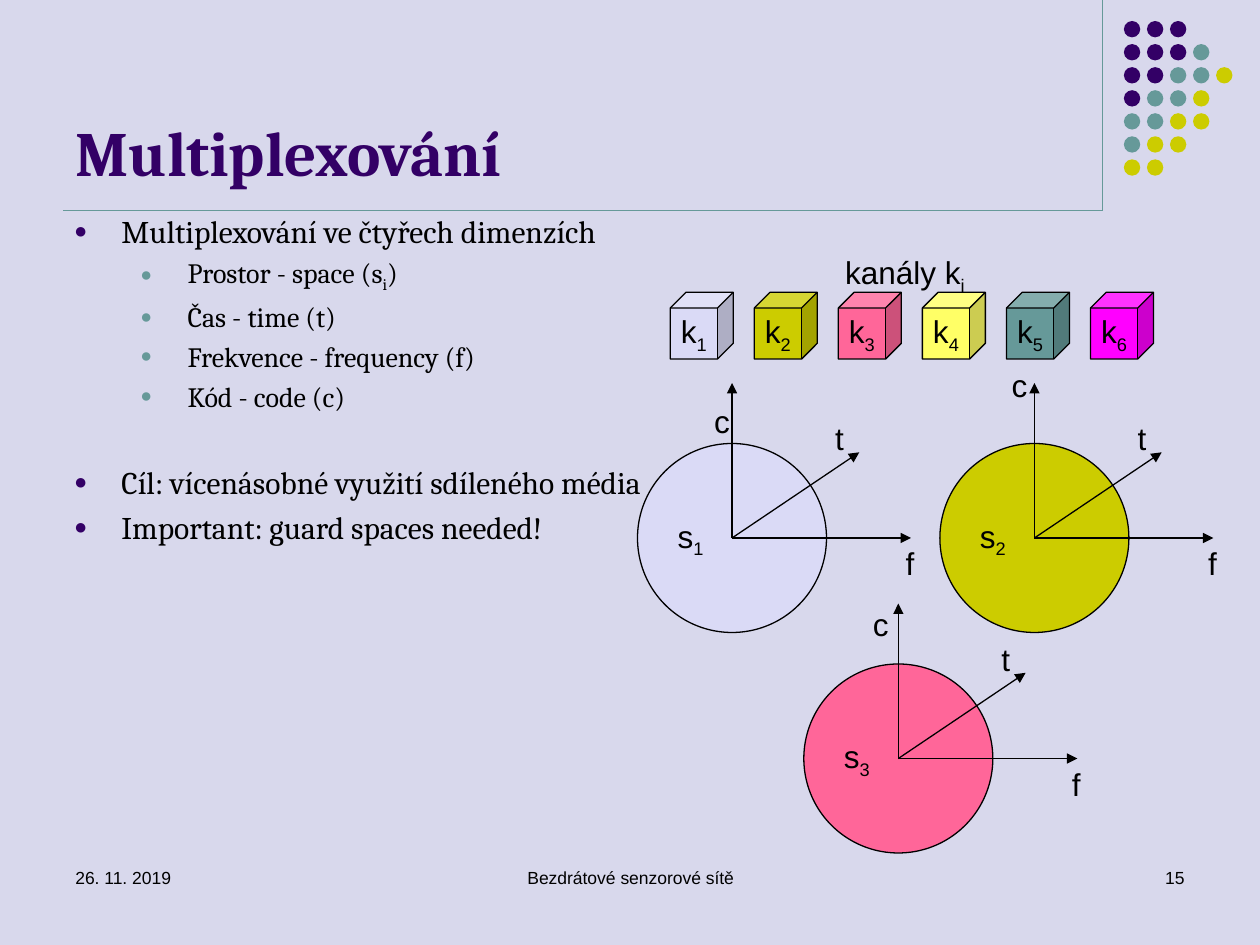
"""Build the slide on multiplexing in four dimensions."""
from dataclasses import dataclass

import lxml.etree
import pptx
import pptx.dml.color
import pptx.enum.shapes
import pptx.enum.text
import pptx.oxml.ns
import pptx.util

SHAPE = pptx.enum.shapes.MSO_SHAPE
ALIGN = pptx.enum.text.PP_ALIGN
ANCHOR = pptx.enum.text.MSO_ANCHOR
COLUMNS, ROWS = 100, 75
PURPLE, TEAL, OLIVE, BLACK = "330066", "669999", "CCCC00", "000000"
LILAC, PINK, YELLOW, MAGENTA = "DADAF6", "FF6699", "FFFF66", "FF00FF"
BACKGROUND = "D8D8EC"


@dataclass
class Style:
    """Font settings of a piece of text."""
    size: float = 18
    font: str = "Arial"
    color: str = BLACK
    bold: bool = False


@dataclass
class Phrase:
    """Words that may hold a subscript."""
    text: str
    sub: str = ""
    rest: str = ""


@dataclass
class Bullet:
    """One line of the list."""
    phrase: Phrase
    level: int = 0
    before: float = 4


@dataclass
class Space:
    """A space with its three axes, placed by its centre."""
    number: str
    column: float
    row: float
    color: str
    code_label: tuple[float, float]


@dataclass
class Footer:
    """One part of the footer line."""
    text: str
    column: float
    width: float
    align: ALIGN


BULLETS = [
    Bullet(Phrase("Multiplexování ve čtyřech dimenzích")),
    Bullet(Phrase("Prostor - space (s", "i", ")"), 1, 3.5),
    Bullet(Phrase("Čas - time (t)"), 1, 3.5),
    Bullet(Phrase("Frekvence - frequency (f)"), 1, 3.5),
    Bullet(Phrase("Kód - code (c)"), 1, 3.5),
    Bullet(Phrase("Cíl: vícenásobné využití sdíleného média"), 0, 29),
    Bullet(Phrase("Important: guard spaces needed!")),
]
SPACES = [
    Space("2", 82.1, 42.7, OLIVE, (-2.8, -14.1)),
    Space("3", 71.3, 60.2, PINK, (-3, -12.7)),
    Space("1", 58.1, 42.7, LILAC, (-2.4, -11.3)),
]
CHANNEL_COLORS = [LILAC, OLIVE, PINK, YELLOW, TEAL, MAGENTA]
DOT_ROWS = ["PPP", "PPPT", "PPTTY", "PTTY", "TTYY", "TYY", "YY"]
DOT_COLORS = {"P": PURPLE, "T": TEAL, "Y": OLIVE}
AXIS_ENDS = [(10.1, -6.8), (0, -12.3), (14.2, 0)]
FOOTERS = [
    Footer("26. 11. 2019", 5, 23.3, ALIGN.LEFT),
    Footer("Bezdrátové senzorové sítě", 34.2, 31.7, ALIGN.CENTER),
    Footer("15", 71.7, 23.3, ALIGN.RIGHT),
]

deck = pptx.Presentation()
deck.slide_width = pptx.util.Inches(10)
deck.slide_height = pptx.util.Inches(7.5)
slide = deck.slides.add_slide(deck.slide_layouts[6])


def across(columns: float) -> int:
    """Turn grid columns into a length."""
    return round(deck.slide_width * columns / COLUMNS)


def down(rows: float) -> int:
    """Turn grid rows into a length."""
    return round(deck.slide_height * rows / ROWS)


def box(column: float, row: float, width: float, height: float) -> tuple:
    """Turn a grid area into slide lengths."""
    return across(column), down(row), across(width), down(height)


def rgb(color: str) -> pptx.dml.color.RGBColor:
    """Turn a hex string into a colour."""
    return pptx.dml.color.RGBColor.from_string(color)


def add_child(parent, tag: str, **attributes: str):
    """Append a drawing element."""
    child = lxml.etree.SubElement(parent, pptx.oxml.ns.qn(tag))
    for key, value in attributes.items():
        child.set(key, value)
    return child


def write(paragraph, phrase: Phrase, style: Style) -> None:
    """Add a phrase run by run."""
    for words, lowered in [(phrase.text, False), (phrase.sub, True), (phrase.rest, False)]:
        if not words:
            continue
        run = paragraph.add_run()
        run.text = words
        run.font.size = pptx.util.Pt(style.size)
        run.font.name = style.font
        run.font.bold = style.bold
        run.font.color.rgb = rgb(style.color)
        if lowered:
            run._r.get_or_add_rPr().set("baseline", "-25000")


def draw_text(area: tuple, phrase: Phrase, style: Style = Style(), align=ALIGN.LEFT,
              anchor=ANCHOR.TOP, wrap: bool = False) -> None:
    """Draw a text box with one paragraph."""
    frame = slide.shapes.add_textbox(*area).text_frame
    frame.word_wrap = wrap
    frame.vertical_anchor = anchor
    frame.paragraphs[0].alignment = align
    write(frame.paragraphs[0], phrase, style)


def draw_shape(kind: SHAPE, area: tuple, color: str, phrase: Phrase | None = None,
               align=ALIGN.LEFT) -> None:
    """Draw a filled shape, outlined when it carries a phrase."""
    shape = slide.shapes.add_shape(kind, *area)
    shape.shadow.inherit = False
    shape.fill.solid()
    shape.fill.fore_color.rgb = rgb(color)
    if phrase is None:
        shape.line.fill.background()
        return
    shape.line.color.rgb = rgb(BLACK)
    shape.line.width = pptx.util.Pt(0.75)
    frame = shape.text_frame
    frame.word_wrap = False
    frame.vertical_anchor = ANCHOR.MIDDLE
    frame.paragraphs[0].alignment = align
    write(frame.paragraphs[0], phrase, Style())


def draw_line(start: tuple, end: tuple, color: str, arrow: bool = False) -> None:
    """Draw a straight line between two grid points."""
    line = slide.shapes.add_connector(
        pptx.enum.shapes.MSO_CONNECTOR.STRAIGHT,
        across(start[0]), down(start[1]), across(end[0]), down(end[1]))
    line.line.color.rgb = rgb(color)
    line.line.width = pptx.util.Pt(0.75)
    if arrow:
        add_child(line.line._get_or_add_ln(), "a:tailEnd", type="triangle")
    add_child(line._element.spPr, "a:effectLst")


def draw_bullets(bullets: list[Bullet]) -> None:
    """Draw the two-level list."""
    frame = slide.shapes.add_textbox(*box(4.9, 16.3, 50.5, 48.2)).text_frame
    frame.word_wrap = True
    for index, bullet in enumerate(bullets):
        paragraph = frame.add_paragraph() if index else frame.paragraphs[0]
        paragraph.space_before = pptx.util.Pt(bullet.before)
        properties = paragraph._p.get_or_add_pPr()
        properties.set("marL", str(across((3.75, 9)[bullet.level])))
        properties.set("indent", str(-across(3.75)))
        tint = add_child(properties, "a:buClr")
        add_child(tint, "a:srgbClr", val=(PURPLE, TEAL)[bullet.level])
        add_child(properties, "a:buSzPct", val="70000")
        add_child(properties, "a:buFont", typeface="Arial")
        add_child(properties, "a:buChar", char="●")
        write(paragraph, bullet.phrase, Style((18, 16)[bullet.level], "Cambria"))


def draw_space(space: Space) -> None:
    """Draw a space, its axes and their labels."""
    column, row = space.column, space.row
    draw_shape(SHAPE.OVAL, box(column - 7.5, row - 7.5, 15, 15), space.color,
               Phrase("s", space.number))
    for right, below in AXIS_ENDS:
        draw_line((column, row), (column + right, row + below), BLACK, arrow=True)
    labels = {"f": (12.8, 0), "t": (7.2, -9.9), "c": space.code_label}
    for letter, (right, below) in labels.items():
        draw_text(box(column + right, row + below, 3.1 if letter == "c" else 2.6, 3.7),
                  Phrase(letter))


def main() -> None:
    """Draw the slide and save it."""
    slide.background.fill.solid()
    slide.background.fill.fore_color.rgb = rgb(BACKGROUND)
    draw_line((87.5, 0), (87.5, 16.7), TEAL)
    draw_line((5, 16.7), (87.5, 16.7), TEAL)
    for row, letters in enumerate(DOT_ROWS):
        for column, letter in enumerate(letters):
            draw_shape(SHAPE.OVAL, box(89.2 + 1.83 * column, 1.67 + 1.83 * row, 1.3, 1.3),
                       DOT_COLORS[letter])
    draw_bullets(BULLETS)
    draw_text(box(5, 1.3, 82.5, 14.2), Phrase("Multiplexování"),
              Style(36, "Cambria", PURPLE, True), anchor=ANCHOR.BOTTOM, wrap=True)
    for space in SPACES:
        draw_space(space)
    for index, color in enumerate(CHANNEL_COLORS):
        draw_shape(SHAPE.CUBE, box(53.2 + 6.67 * index, 23.2, 5, 5.3), color,
                   Phrase("k", str(index + 1)), ALIGN.CENTER)
    draw_text(box(66.1, 19.6, 11.6, 4), Phrase("kanály k", "i"))
    for footer in FOOTERS:
        draw_text(box(footer.column, 68.3, footer.width, 5), Phrase(footer.text),
                  Style(10), footer.align, wrap=True)
    deck.save("out.pptx")


if __name__ == "__main__":
    main()
